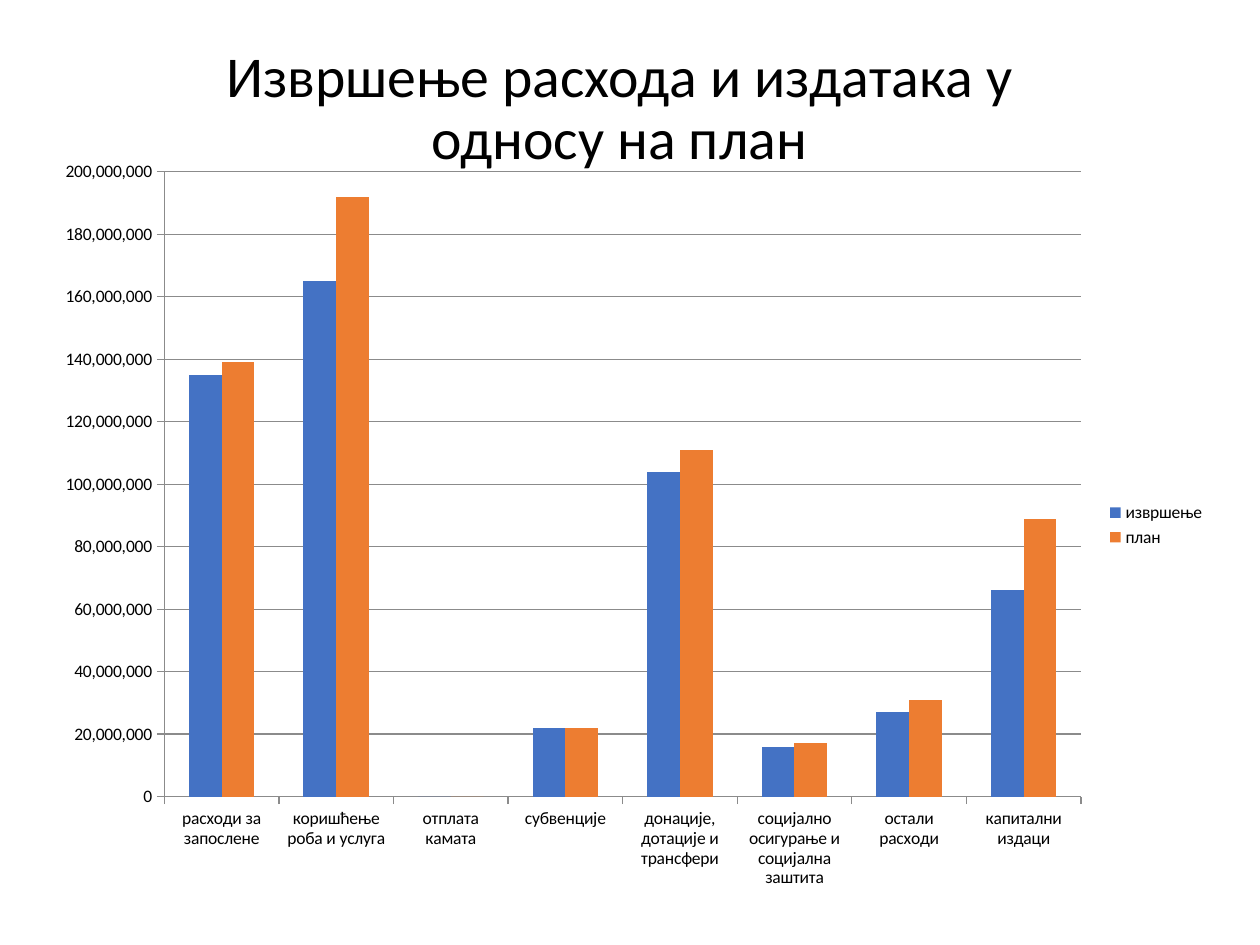
from pptx import Presentation
from pptx.chart.data import CategoryChartData
from pptx.dml.color import RGBColor
from pptx.enum.chart import XL_CHART_TYPE, XL_LEGEND_POSITION, XL_TICK_MARK
from pptx.enum.text import MSO_ANCHOR, PP_ALIGN
from pptx.util import Pt

COLUMN = XL_CHART_TYPE.COLUMN_CLUSTERED
RIGHT = XL_LEGEND_POSITION.RIGHT
OUT = XL_TICK_MARK.OUTSIDE
BOTTOM = MSO_ANCHOR.BOTTOM
CENTER = PP_ALIGN.CENTER
FACE = "Calibri"
BLACK = "000000"
GRAY = "8B8B8B"
MILLION = 1_000_000


def paint(color, code):
    color.rgb = RGBColor.from_string(code)


deck = Presentation()
deck.slide_width, deck.slide_height = Pt(720), Pt(540)
slide = deck.slides.add_slide(deck.slide_layouts[6])

groups = [
    "расходи за запослене",
    "коришћење роба и услуга",
    "отплата камата",
    "субвенције",
    "донације, дотације и трансфери",
    "социјално осигурање и социјална заштита",
    "остали расходи",
    "капитални издаци",
]
series = [
    ("извршење", "4472C4", [135, 165, 0, 22, 104, 16, 27, 66]),
    ("план", "ED7D31", [139, 192, 0, 22, 111, 17, 31, 89]),
]
data = CategoryChartData(number_format="#,##0")
data.categories = groups
for name, code, sums in series:
    data.add_series(name, [n * MILLION for n in sums])

chart = slide.shapes.add_chart(COLUMN, Pt(24), Pt(84), Pt(672), Pt(432), data).chart
chart.has_title = False
chart.font.name = FACE
chart.font.size = Pt(10)
paint(chart.font.color, BLACK)
chart.has_legend = True
chart.legend.position = RIGHT
chart.legend.include_in_layout = False

plot = chart.plots[0]
plot.gap_width = 150
plot.overlap = 0
plot.vary_by_categories = False
for bars, (name, code, sums) in zip(plot.series, series):
    bars.invert_if_negative = False
    bars.format.fill.solid()
    paint(bars.format.fill.fore_color, code)

scale = chart.value_axis
scale.minimum_scale = 0
scale.maximum_scale = 200 * MILLION
scale.major_unit = 20 * MILLION
scale.has_major_gridlines = True
scale.tick_labels.number_format = "#,##0"
scale.tick_labels.number_format_is_linked = False
for axis in (scale, chart.category_axis):
    axis.major_tick_mark = OUT
for part in (scale, chart.category_axis, scale.major_gridlines):
    part.format.line.width = Pt(0.75)
    paint(part.format.line.color, GRAY)

title = slide.shapes.add_textbox(Pt(84), Pt(18), Pt(540), Pt(84))
frame = title.text_frame
frame.word_wrap = True
frame.vertical_anchor = BOTTOM
para = frame.paragraphs[0]
para.alignment = CENTER
para.line_spacing = 0.9
run = para.add_run()
run.text = "Извршење расхода и издатака у односу на план"
run.font.name = FACE
run.font.size = Pt(33)
paint(run.font.color, BLACK)

deck.save("out.pptx")
